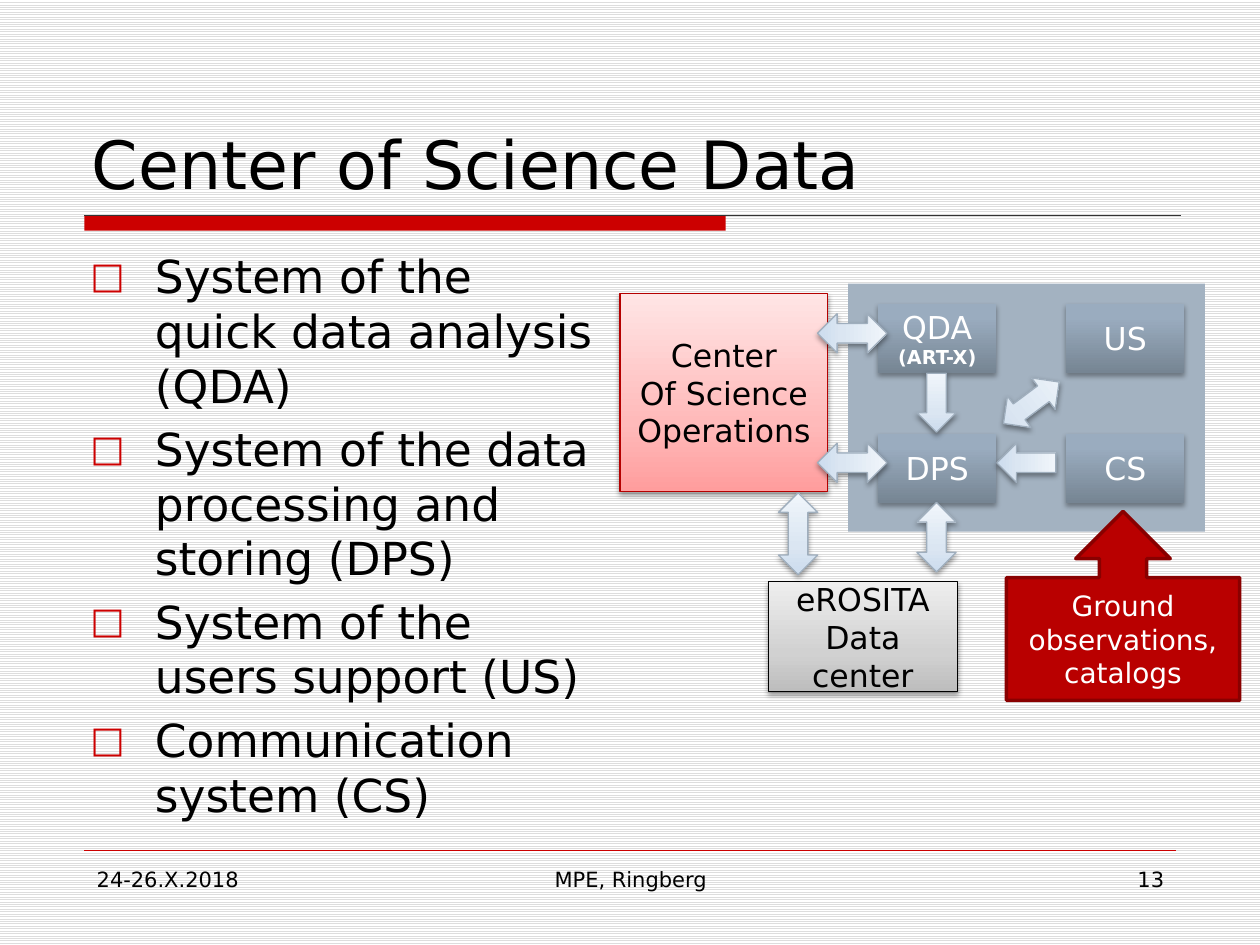
"""Build the Center of Science Data slide with its data-flow diagram."""
import pptx
import pptx.dml.color
import pptx.enum.dml
import pptx.enum.shapes
import pptx.enum.text
import pptx.oxml
import pptx.oxml.ns
import pptx.util

Cm = pptx.util.Cm
Pt = pptx.util.Pt
RGBColor = pptx.dml.color.RGBColor
SHAPE = pptx.enum.shapes.MSO_SHAPE
ALIGN = pptx.enum.text.PP_ALIGN
ANCHOR = pptx.enum.text.MSO_ANCHOR

FONT = "DejaVu Sans"
BLACK = RGBColor(0x00, 0x00, 0x00)
WHITE = RGBColor(0xFF, 0xFF, 0xFF)
STRIPE = RGBColor(0xDD, 0xDD, 0xDD)
RED = RGBColor(0xCC, 0x00, 0x00)
RULE = RGBColor(0x33, 0x33, 0x33)
PANEL = RGBColor(0xA3, 0xB2, 0xC1)
ARROW_LINE = RGBColor(0x9F, 0xAE, 0xBD)
OPERATIONS_LINE = RGBColor(0xB5, 0x00, 0x00)
CALLOUT = RGBColor(0xB9, 0x00, 0x00)
CALLOUT_LINE = RGBColor(0x89, 0x00, 0x00)

NODE_STOPS = [(0, "768593"), (80, "9AACBF"), (100, "9AADC1")]
ARROW_STOPS = [(0, "CCDCEE"), (35, "DBE6F2"), (100, "F0F5FB")]
GRAY_STOPS = [(0, "BDBDBD"), (35, "D1D1D1"), (100, "EEEEEE")]
PINK_STOPS = [(0, "FF9D9D"), (35, "FFBABA"), (100, "FFE5E5")]

TITLE = "Center of Science Data"
BULLETS = [
    "System of the quick data analysis (QDA)",
    "System of the data processing and storing (DPS)",
    "System of the users support (US)",
    "Communication system (CS)",
]
FOOTERS = [
    ("24-26.X.2018", 1.7, 5.51, ALIGN.LEFT),
    ("MPE, Ringberg", 8.69, 8.05, ALIGN.CENTER),
    ("13", 18.21, 5.51, ALIGN.RIGHT),
]
NODE_ROWS = [
    [[("QDA", 18, False), ("(ART-X)", 11, True)], [("US", 18, False)]],
    [[("DPS", 18, False)], [("CS", 18, False)]],
]
NODE_LEFT, NODE_TOP, NODE_WIDTH, NODE_HEIGHT = 17.7, 6.12, 2.39, 1.4
COLUMN_STEP, ROW_STEP = 3.79, 2.62
CENTERS = [
    (["eROSITA", "Data center"], (15.49, 11.73, 3.81, 2.21), GRAY_STOPS, BLACK),
    (["Center", "Of Science", "Operations"], (12.5, 5.92, 4.19, 3.99), PINK_STOPS, OPERATIONS_LINE),
]
GROUND = ["Ground observations,", "catalogs"]
ARROW_WIDTH = 0.79
ARROWS = [
    (SHAPE.DOWN_ARROW, 18.88, 8.12, 1.19, 0),
    (SHAPE.DOWN_ARROW, 20.69, 9.33, 1.19, 90),
    (SHAPE.UP_DOWN_ARROW, 18.88, 10.83, 1.4, 0),
    (SHAPE.UP_DOWN_ARROW, 16.09, 10.76, 1.65, 0),
    (SHAPE.UP_DOWN_ARROW, 20.79, 8.12, 1.4, 53.3),
    (SHAPE.UP_DOWN_ARROW, 17.18, 6.72, 1.4, 90),
    (SHAPE.UP_DOWN_ARROW, 17.18, 9.33, 1.4, 90),
]


def element(markup):
    namespace = pptx.oxml.ns.nsdecls("a")
    return pptx.oxml.parse_xml(markup.replace(" ", f" {namespace} ", 1))


def write(frame, lines, color, align, anchor):
    frame.word_wrap = True
    frame.auto_size = pptx.enum.text.MSO_AUTO_SIZE.NONE
    frame.vertical_anchor = anchor
    for index, (text, size, bold) in enumerate(lines):
        paragraph = frame.add_paragraph() if index else frame.paragraphs[0]
        paragraph.alignment = align
        run = paragraph.add_run()
        run.text = text
        run.font.name = FONT
        run.font.size = Pt(size)
        run.font.bold = bold
        run.font.color.rgb = color


def place(shape, left, top, width, height):
    shape.left, shape.top, shape.width, shape.height = map(Cm, (left, top, width, height))


def add_block(slide, kind, box, fill, line=None, line_width=0.75):
    shape = slide.shapes.add_shape(kind, *map(Cm, box))
    shape.shadow.inherit = False
    if isinstance(fill, list):
        shape.fill.gradient()
        shape.fill.gradient_angle = 90
        stops = shape._element.spPr.find(".//" + pptx.oxml.ns.qn("a:gsLst"))
        for stop in list(stops):
            stops.remove(stop)
        for position, color in fill:
            stops.append(element(f'<a:gs pos="{position * 1000}"><a:srgbClr val="{color}"/></a:gs>'))
    else:
        shape.fill.solid()
        shape.fill.fore_color.rgb = fill
    if line is None:
        shape.line.fill.background()
    else:
        shape.line.color.rgb = line
        shape.line.width = Pt(line_width)
    return shape


def add_shadow(shape, opacity=38, distance=1.6):
    effects = shape._element.spPr.find(pptx.oxml.ns.qn("a:effectLst"))
    effects.append(element(
        f'<a:outerShdw blurRad="{Pt(3.1)}" dist="{Pt(distance)}" dir="5400000" rotWithShape="0">'
        f'<a:srgbClr val="000000"><a:alpha val="{opacity * 1000}"/></a:srgbClr></a:outerShdw>'))


def add_rule(slide, left, right, top, color, width):
    rule = slide.shapes.add_connector(
        pptx.enum.shapes.MSO_CONNECTOR.STRAIGHT, Cm(left), Cm(top), Cm(right), Cm(top))
    rule.line.color.rgb = color
    rule.line.width = Pt(width)
    rule._element.spPr.append(element("<a:effectLst />"))


def add_texts(slide):
    place(slide.shapes.title, 1.6, 0.84, 22.23, 3.38)
    write(slide.shapes.title.text_frame, [(TITLE, 38, False)], BLACK, ALIGN.LEFT, ANCHOR.BOTTOM)
    body = slide.placeholders[1]
    place(body, 1.57, 4.88, 10.9, 11.86)
    write(body.text_frame, [(text, 26, False) for text in BULLETS], BLACK, ALIGN.LEFT, ANCHOR.TOP)
    for paragraph in body.text_frame.paragraphs:
        properties = paragraph._p.get_or_add_pPr()
        properties.set("marL", str(Cm(1.3)))
        properties.set("indent", str(-Cm(1.3)))
        for markup in (f'<a:buClr ><a:srgbClr val="{RED}"/></a:buClr>', '<a:buSzPct val="80000"/>',
                       f'<a:buFont typeface="{FONT}"/>', '<a:buChar char="□"/>'):
            properties.append(element(markup))
    for text, left, width, align in FOOTERS:
        box = slide.shapes.add_textbox(Cm(left), Cm(17.35), Cm(width), Cm(1.32))
        write(box.text_frame, [(text, 12, False)], BLACK, align, ANCHOR.TOP)


def add_diagram(slide):
    add_block(slide, SHAPE.RECTANGLE, (17.1, 5.72, 7.19, 5.0), PANEL)
    for row, nodes in enumerate(NODE_ROWS):
        for column, lines in enumerate(nodes):
            box = (NODE_LEFT + column * COLUMN_STEP, NODE_TOP + row * ROW_STEP, NODE_WIDTH, NODE_HEIGHT)
            node = add_block(slide, SHAPE.RECTANGLE, box, NODE_STOPS)
            add_shadow(node, 35, 1.8)
            write(node.text_frame, lines, WHITE, ALIGN.CENTER, ANCHOR.MIDDLE)
    for lines, box, stops, line in CENTERS:
        center = add_block(slide, SHAPE.RECTANGLE, box, stops, line)
        add_shadow(center)
        write(center.text_frame, [(text, 18, False) for text in lines], BLACK, ALIGN.CENTER, ANCHOR.MIDDLE)
    for kind, middle_x, middle_y, length, rotation in ARROWS:
        box = (middle_x - ARROW_WIDTH / 2, middle_y - length / 2, ARROW_WIDTH, length)
        arrow = add_block(slide, kind, box, ARROW_STOPS, ARROW_LINE)
        arrow.rotation = rotation
        add_shadow(arrow)
    ground = add_block(slide, SHAPE.UP_ARROW_CALLOUT, (20.29, 10.31, 4.7, 3.81), CALLOUT, CALLOUT_LINE, 2)
    write(ground.text_frame, [(text, 16, False) for text in GROUND], WHITE, ALIGN.CENTER, ANCHOR.MIDDLE)


def main():
    presentation = pptx.Presentation()
    presentation.slide_width, presentation.slide_height = Cm(25.4), Cm(19.05)
    slide = presentation.slides.add_slide(presentation.slide_layouts[1])
    background = slide.background.fill
    background.patterned()
    background.pattern = pptx.enum.dml.MSO_PATTERN.LIGHT_HORIZONTAL
    background.fore_color.rgb = STRIPE
    background.back_color.rgb = WHITE
    add_block(slide, SHAPE.RECTANGLE, (1.7, 4.34, 12.93, 0.31), RED)
    add_rule(slide, 1.7, 23.8, 4.34, RULE, 0.75)
    add_rule(slide, 1.7, 23.7, 17.14, RED, 0.25)
    add_texts(slide)
    add_diagram(slide)
    presentation.save("out.pptx")


if __name__ == "__main__":
    main()
